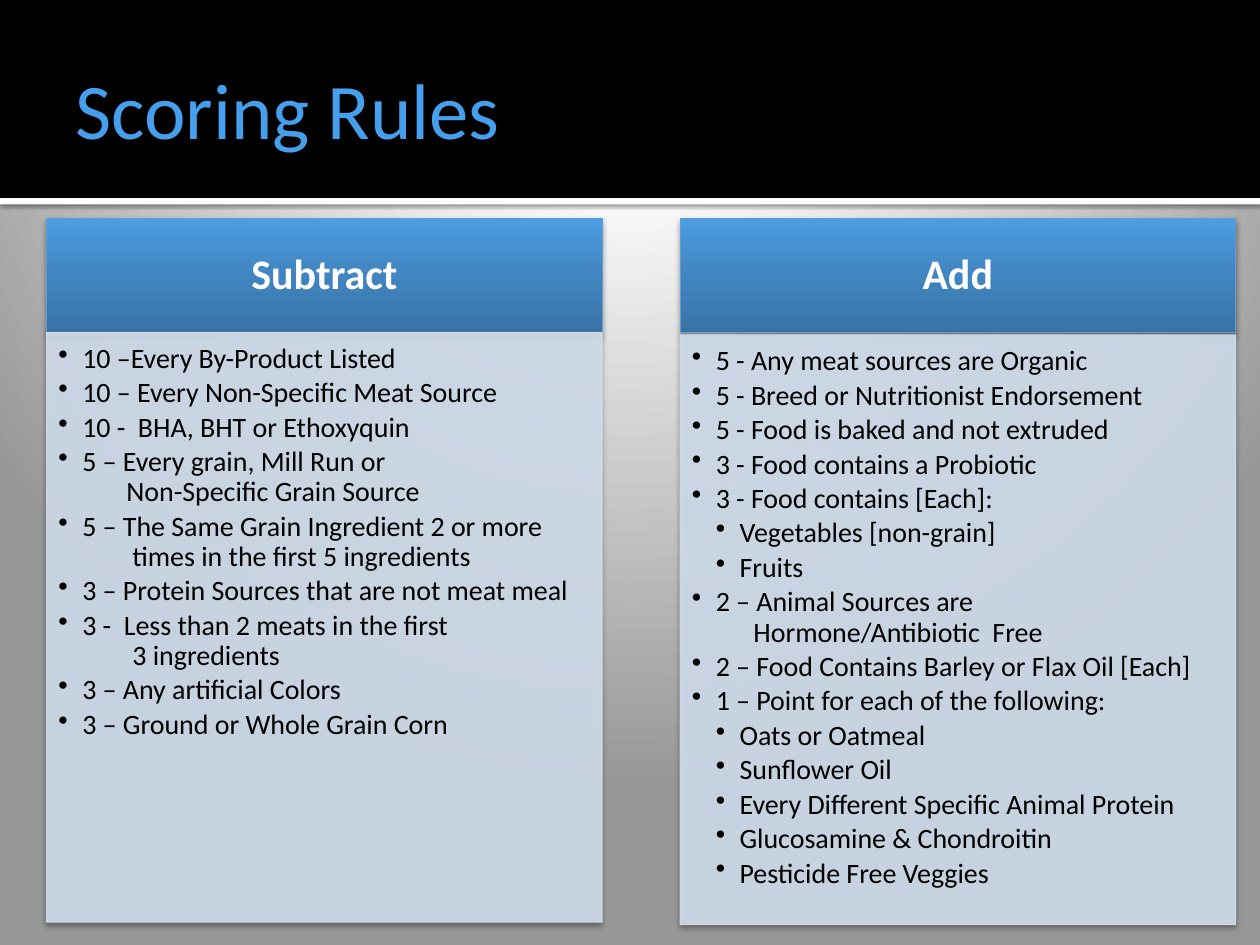
from lxml import etree
from pptx import Presentation
from pptx.dml.color import RGBColor
from pptx.enum.shapes import MSO_SHAPE
from pptx.enum.text import MSO_ANCHOR, MSO_AUTO_SIZE, PP_ALIGN
from pptx.oxml.ns import qn
from pptx.util import Cm, Pt

RECTANGLE = MSO_SHAPE.RECTANGLE
TOP, MIDDLE = MSO_ANCHOR.TOP, MSO_ANCHOR.MIDDLE
LEFT, CENTER = PP_ALIGN.LEFT, PP_ALIGN.CENTER
NO_AUTOFIT = MSO_AUTO_SIZE.NONE
INDENT = 0.48  # centimetres per bullet level

# Each item: level, text, tab stop in centimetres for its second line
COLUMNS = [
    ("Subtract", 0.94, 6.7, [
        (1, "10 –Every By-Product Listed", None),
        (1, "10 – Every Non-Specific Meat Source", None),
        (1, "10 -  BHA, BHT or Ethoxyquin", None),
        (1, "5 – Every grain, Mill Run or\v\tNon-Specific Grain Source", 0.89),
        (1, "5 – The Same Grain Ingredient 2 or more\v\ttimes in the first 5 ingredients", 1.01),
        (1, "3 – Protein Sources that are not meat meal", None),
        (1, "3 -  Less than 2 meats in the first\v\t3 ingredients", 1.01),
        (1, "3 – Any artificial Colors", None),
        (1, "3 – Ground or Whole Grain Corn", None),
    ]),
    ("Add", 13.71, 6.75, [
        (1, "5 - Any meat sources are Organic", None),
        (1, "5 - Breed or Nutritionist Endorsement", None),
        (1, "5 - Food is baked and not extruded", None),
        (1, "3 - Food contains a Probiotic", None),
        (1, "3 - Food contains [Each]:", None),
        (2, "Vegetables [non-grain]", None),
        (2, "Fruits", None),
        (1, "2 – Animal Sources are\v\tHormone/Antibiotic  Free", 0.76),
        (1, "2 – Food Contains Barley or Flax Oil [Each]", None),
        (1, "1 – Point for each of the following:", None),
        (2, "Oats or Oatmeal", None),
        (2, "Sunflower Oil", None),
        (2, "Every Different Specific Animal Protein", None),
        (2, "Glucosamine & Chondroitin", None),
        (2, "Pesticide Free Veggies", None),
    ]),
]


def color(value):
    return RGBColor.from_string(value)


def write(paragraph, text, size, fill, bold=False, align=LEFT, spacing=None, after=0,
          level=0, tab=None):
    paragraph.text = text
    paragraph.alignment = align
    paragraph.line_spacing = spacing
    paragraph.space_after = Pt(after)
    if level:
        paragraph.level = level
        properties = paragraph._p.get_or_add_pPr()
        properties.set("marL", str(Cm(INDENT * level)))
        properties.set("indent", str(-Cm(INDENT)))
        etree.SubElement(properties, qn("a:buChar"), char="•")
        if tab:
            tabs = etree.SubElement(properties, qn("a:tabLst"))
            etree.SubElement(tabs, qn("a:tab"), pos=str(Cm(INDENT * level + tab)), algn="l")
    for line_break in paragraph._p.iter(qn("a:br")):
        etree.SubElement(line_break, qn("a:rPr"), sz=str(size * 100))
    for run in paragraph.runs:
        run.font.name = "Calibri"
        run.font.size = Pt(size)
        run.font.bold = bold
        run.font.color.rgb = color(fill)


presentation = Presentation()
presentation.slide_width, presentation.slide_height = Cm(25.4), Cm(19.05)
slide = presentation.slides.add_slide(presentation.slide_layouts[5])
shapes = slide.shapes
shadows = []  # shape, opacity %, blur pt, distance pt
gradients = []  # gradient element, stops

# Background
slide.background.fill.gradient()
backdrop = next(slide.element.iter(qn("a:gradFill")))
backdrop.remove(backdrop.find(qn("a:lin")))
circle = etree.SubElement(backdrop, qn("a:path"), path="circle")
etree.SubElement(circle, qn("a:fillToRect"), l="10000", t="-25000", r="10000", b="125000")
gradients.append((backdrop, [(0, "FFFFFF"), (20, "FFFFFF"), (100, "979797")]))

# Title band and the white rule below it
for top, height, fill in [(3.99, 0.13, "FFFFFF"), (0, 3.99, "000000")]:
    band = shapes.add_shape(RECTANGLE, 0, Cm(top), Cm(25.4), Cm(height))
    band.shadow.inherit = False
    band.fill.solid()
    band.fill.fore_color.rgb = color(fill)
    band.line.fill.background()
    if top:
        shadows.append((band, 60, 2.5, 0.8))

# Title, raised above the band
title = shapes.title
title.left, title.top, title.width, title.height = Cm(1.27), Cm(0.43), Cm(22.86), Cm(3.48)
shapes._spTree.append(title._element)
title.text_frame.vertical_anchor = MIDDLE
title.text_frame.auto_size = NO_AUTOFIT
title.text_frame.margin_left = Cm(0.25)
title.text_frame.margin_right = Cm(0.13)
write(title.text_frame.paragraphs[0], "Scoring Rules", 45, "469FED")

# Two columns, each a header over a list
for heading, left, list_top, items in COLUMNS:
    header = shapes.add_shape(RECTANGLE, Cm(left), Cm(4.4), Cm(11.2), Cm(2.31))
    panel = shapes.add_shape(RECTANGLE, Cm(left), Cm(list_top), Cm(11.2), Cm(11.89))
    for shape, line, anchor, margins in [
        (header, "629DD1", MIDDLE, (0.48, 0.28, 0.48, 0.28)),
        (panel, "D3DFEE", TOP, (0.24, 0.24, 0.3, 0.36)),
    ]:
        shape.shadow.inherit = False
        shape.line.color.rgb = color(line)
        shape.line.width = Pt(0.5)
        shadows.append((shape, 38, 3.1, 2))
        frame = shape.text_frame
        frame.word_wrap = True
        frame.vertical_anchor = anchor
        (frame.margin_left, frame.margin_top,
         frame.margin_right, frame.margin_bottom) = map(Cm, margins)

    header.fill.gradient()
    header.fill.gradient_angle = 90
    gradients.append((header._element.spPr.find(qn("a:gradFill")),
                      [(0, "3873A6"), (55, "4287C3"), (100, "4D9DE4")]))
    write(header.text_frame.paragraphs[0], heading, 24, "FFFFFF", bold=True, align=CENTER,
          spacing=0.9)

    panel.fill.solid()
    panel.fill.fore_color.rgb = color("D3DFEE")
    for panel_color in panel._element.spPr.iter(qn("a:srgbClr")):
        etree.SubElement(panel_color, qn("a:alpha"), val="90000")
    for index, (level, text, tab) in enumerate(items):
        frame = panel.text_frame
        paragraph = frame.add_paragraph() if index else frame.paragraphs[0]
        write(paragraph, text, 16, "000000", spacing=0.9, after=2.4, level=level, tab=tab)

# Gradient stops
for gradient, stops in gradients:
    stop_list = gradient.find(qn("a:gsLst"))
    for old_stop in list(stop_list):
        stop_list.remove(old_stop)
    for position, value in stops:
        stop = etree.SubElement(stop_list, qn("a:gs"), pos=str(position * 1000))
        etree.SubElement(stop, qn("a:srgbClr"), val=value)

# Shadows falling straight down
for shape, opacity, blur, distance in shadows:
    effects = shape._element.spPr.find(qn("a:effectLst"))
    shadow = etree.SubElement(effects, qn("a:outerShdw"), blurRad=str(Pt(blur)),
                              dist=str(Pt(distance)), dir="5400000", rotWithShape="0")
    shadow_color = etree.SubElement(shadow, qn("a:srgbClr"), val="000000")
    etree.SubElement(shadow_color, qn("a:alpha"), val=str(opacity * 1000))

presentation.save("out.pptx")
